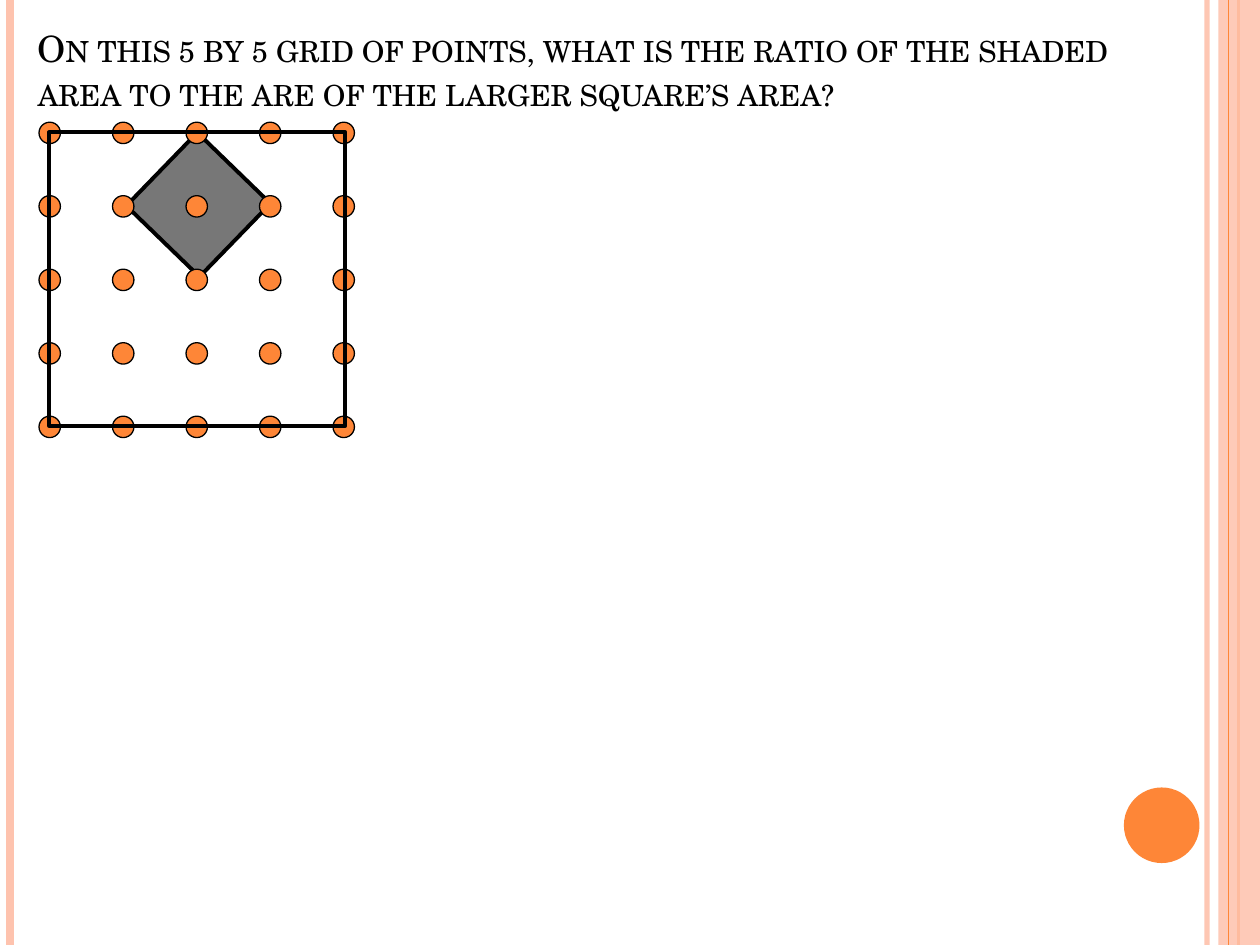
from dataclasses import dataclass
from itertools import product
from typing import Optional

from lxml.etree import SubElement
from pptx import Presentation
from pptx.dml.color import RGBColor
from pptx.enum.shapes import MSO_CONNECTOR, MSO_SHAPE
from pptx.enum.text import MSO_ANCHOR
from pptx.oxml.ns import qn
from pptx.util import Inches, Pt


@dataclass(frozen=True)
class Theme:
    orange: str = "FE8637"
    peach: str = "FEC3AE"
    gray: str = "777777"
    black: str = "000000"
    font: str = "TeX Gyre Schola"
    title_size: float = 20.7
    outline: float = 2.25
    hairline: float = 0.75


@dataclass(frozen=True)
class Stripe:
    x: float
    color: str
    width: float
    opacity: int = 100


@dataclass(frozen=True)
class Figure:
    kind: MSO_SHAPE
    left: float
    top: float
    width: float
    height: float
    fill: Optional[str] = None
    line_width: Optional[float] = None
    rotation: float = 0
    opacity: int = 100


THEME = Theme()
SLIDE_WIDTH, SLIDE_HEIGHT = 10, 7.5
GRID_SIZE = 5
GRID_LEFT, GRID_TOP = 0.31, 0.97
GRID_PITCH = 7 / 12
DOT_SIZE = 0.17
TITLE = ("On this 5 by 5 grid of points, what is the ratio of the shaded area "
         "to the are of the larger square’s area?")


def set_opacity(element, percent: int) -> None:
    if percent < 100:
        color = next(element.iter(qn("a:srgbClr")))
        SubElement(color, qn("a:alpha"), val=str(percent * 1000))


def draw_stripe(slide, stripe: Stripe) -> None:
    connector = slide.shapes.add_connector(
        MSO_CONNECTOR.STRAIGHT, Inches(stripe.x), Inches(0),
        Inches(stripe.x), Inches(SLIDE_HEIGHT))
    connector.line.color.rgb = RGBColor.from_string(stripe.color)
    connector.line.width = Pt(stripe.width)
    properties = connector._element.spPr
    set_opacity(properties, stripe.opacity)
    SubElement(properties, qn("a:effectLst"))


def draw_figure(slide, figure: Figure) -> None:
    shape = slide.shapes.add_shape(
        figure.kind, Inches(figure.left), Inches(figure.top),
        Inches(figure.width), Inches(figure.height))
    shape.shadow.inherit = False
    shape.rotation = figure.rotation
    if figure.fill:
        shape.fill.solid()
        shape.fill.fore_color.rgb = RGBColor.from_string(figure.fill)
        set_opacity(shape._element.spPr, figure.opacity)
    else:
        shape.fill.background()
    if figure.line_width:
        shape.line.color.rgb = RGBColor.from_string(THEME.black)
        shape.line.width = Pt(figure.line_width)
    else:
        shape.line.fill.background()


def draw_title(slide, text: str) -> None:
    box = slide.shapes.add_textbox(Inches(0.2), Inches(0.13), Inches(9), Inches(0.82))
    frame = box.text_frame
    for name, value in {"word_wrap": True, "vertical_anchor": MSO_ANCHOR.BOTTOM}.items():
        setattr(frame, name, value)
    run = frame.paragraphs[0].add_run()
    run.text = text
    for name, value in {"name": THEME.font, "size": Pt(THEME.title_size)}.items():
        setattr(run.font, name, value)
    run.font.color.rgb = RGBColor.from_string(THEME.black)
    run._r.get_or_add_rPr().set("cap", "small")


def main() -> None:
    presentation = Presentation()
    presentation.slide_width = Inches(SLIDE_WIDTH)
    presentation.slide_height = Inches(SLIDE_HEIGHT)
    slide = presentation.slides.add_slide(presentation.slide_layouts[6])

    # Side stripes, right band and corner disc
    for stripe in (Stripe(9.58, THEME.peach, 3, 93),
                   Stripe(0.08, THEME.peach, 4.5),
                   Stripe(9.83, THEME.orange, 1.5)):
        draw_stripe(slide, stripe)
    draw_figure(slide, Figure(MSO_SHAPE.RECTANGLE, 9.67, 0, 0.33, SLIDE_HEIGHT,
                              THEME.peach, opacity=87))
    draw_stripe(slide, Stripe(9.75, THEME.orange, THEME.hairline))
    draw_figure(slide, Figure(MSO_SHAPE.OVAL, 8.92, 6.25, 0.6, 0.6, THEME.orange))

    # Shaded square and question
    draw_figure(slide, Figure(MSO_SHAPE.RECTANGLE, 1.17, 1.22, 0.81, 0.81,
                              THEME.gray, THEME.outline, rotation=44.1))
    draw_title(slide, TITLE)

    # Grid of points
    for column, row in product(range(GRID_SIZE), repeat=2):
        draw_figure(slide, Figure(
            MSO_SHAPE.OVAL, GRID_LEFT + column * GRID_PITCH, GRID_TOP + row * GRID_PITCH,
            DOT_SIZE, DOT_SIZE, THEME.orange, THEME.hairline))

    # Larger square
    draw_figure(slide, Figure(MSO_SHAPE.RECTANGLE, 0.39, 1.05, 2.35, 2.33,
                              line_width=THEME.outline))

    presentation.save("out.pptx")


if __name__ == "__main__":
    main()
